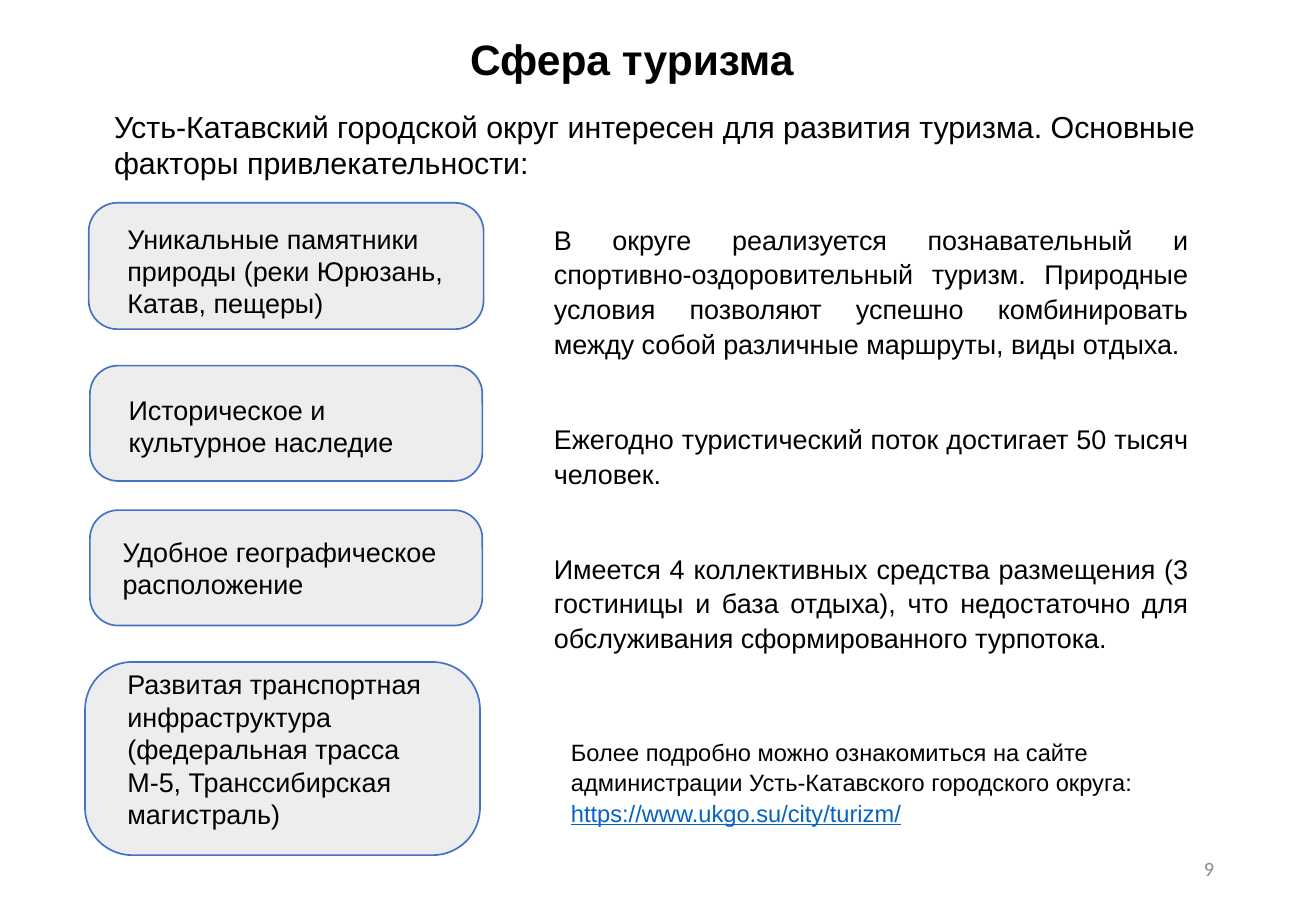
from pptx import Presentation
from pptx import util as u
from pptx.dml.color import RGBColor
from pptx.enum import shapes, text

PX = 9144
THEME = {
    "font": "Arial", "number_font": "Calibri",
    "ink": "000000", "muted": "8C8C8C", "link": "0563C1",
    "card": "EDEDED", "border": "4472C4",
    "title": 25.2, "intro": 18, "body": 16, "note": 14, "number": 12,
}

deck = Presentation()
deck.slide_width, deck.slide_height = 1083 * PX, 750 * PX
slide = deck.slides.add_slide(deck.slide_layouts[6])


def style(paragraph, size, color="ink", font="font", bold=False):
    for run in paragraph.runs:
        run.font.name = THEME[font]
        run.font.size = u.Pt(THEME[size])
        run.font.bold = bold
        run.font.color.rgb = RGBColor.from_string(THEME[color])


def add_text(place, words, size, align=text.PP_ALIGN.LEFT, anchor=text.MSO_ANCHOR.TOP, **look):
    frame = slide.shapes.add_textbox(*(n * PX for n in place)).text_frame
    frame.word_wrap = True
    frame.vertical_anchor = anchor
    frame.text = words
    for paragraph in frame.paragraphs:
        paragraph.alignment = align
        style(paragraph, size, **look)
    return frame


title = add_text((309, 28, 422, 45), "Сфера туризма", "title",
                 text.PP_ALIGN.CENTER, text.MSO_ANCHOR.MIDDLE, bold=True)
title.paragraphs[0].line_spacing = 0.9

add_text((765, 695, 244, 40), "9", "number", text.PP_ALIGN.RIGHT,
         text.MSO_ANCHOR.MIDDLE, color="muted", font="number_font")

add_text((84, 84, 973, 71),
         "Усть-Катавский городской округ интересен для развития туризма. "
         "Основные факторы привлекательности:", "intro")

factors = [
    ((73, 167, 325, 104), 0.227, (95, 178, 295, 91),
     "Уникальные памятники природы (реки Юрюзань, Катав, пещеры)"),
    ((74, 301, 323, 95), 0.245, (96, 319, 295, 64),
     "Историческое и культурное наследие"),
    ((74, 420, 323, 95), 0.245, (91, 436, 289, 64),
     "Удобное географическое расположение"),
    ((70, 545, 325, 159), 0.245, (95, 545, 285, 145),
     "Развитая транспортная инфраструктура (федеральная трасса М-5, "
     "Транссибирская магистраль)"),
]
for card_place, rounding, label_place, factor in factors:
    card = slide.shapes.add_shape(shapes.MSO_SHAPE.ROUNDED_RECTANGLE,
                                  *(n * PX for n in card_place))
    card.adjustments[0] = rounding
    card.shadow.inherit = False
    card.fill.solid()
    card.fill.fore_color.rgb = RGBColor.from_string(THEME["card"])
    card.line.color.rgb = RGBColor.from_string(THEME["border"])
    card.line.width = u.Pt(1)
    add_text(label_place, factor, "body")

facts = [
    "В округе реализуется познавательный и спортивно-оздоровительный туризм. "
    "Природные условия позволяют успешно комбинировать между собой различные "
    "маршруты, виды отдыха.",
    "Ежегодно туристический поток достигает 50 тысяч человек.",
    "Имеется 4 коллективных средства размещения (3 гостиницы и база отдыха), "
    "что недостаточно для обслуживания сформированного турпотока.",
]
overview = add_text((446, 177, 542, 370), "\n".join(facts), "body", text.PP_ALIGN.JUSTIFY)
for fact in overview.paragraphs:
    fact.line_spacing = 1.07
    fact.space_after = u.Pt(36)

details = add_text((460, 601, 510, 84),
                   "Более подробно можно ознакомиться на сайте администрации "
                   "Усть-Катавского городского округа: ", "note").paragraphs[0]
details.line_spacing = 1.07
site = details.add_run()
site.text = "https://www.ukgo.su/city/turizm/"
site.font.name = THEME["font"]
site.font.size = u.Pt(THEME["note"])
site.font.underline = True
site.font.color.rgb = RGBColor.from_string(THEME["link"])

deck.save("out.pptx")
